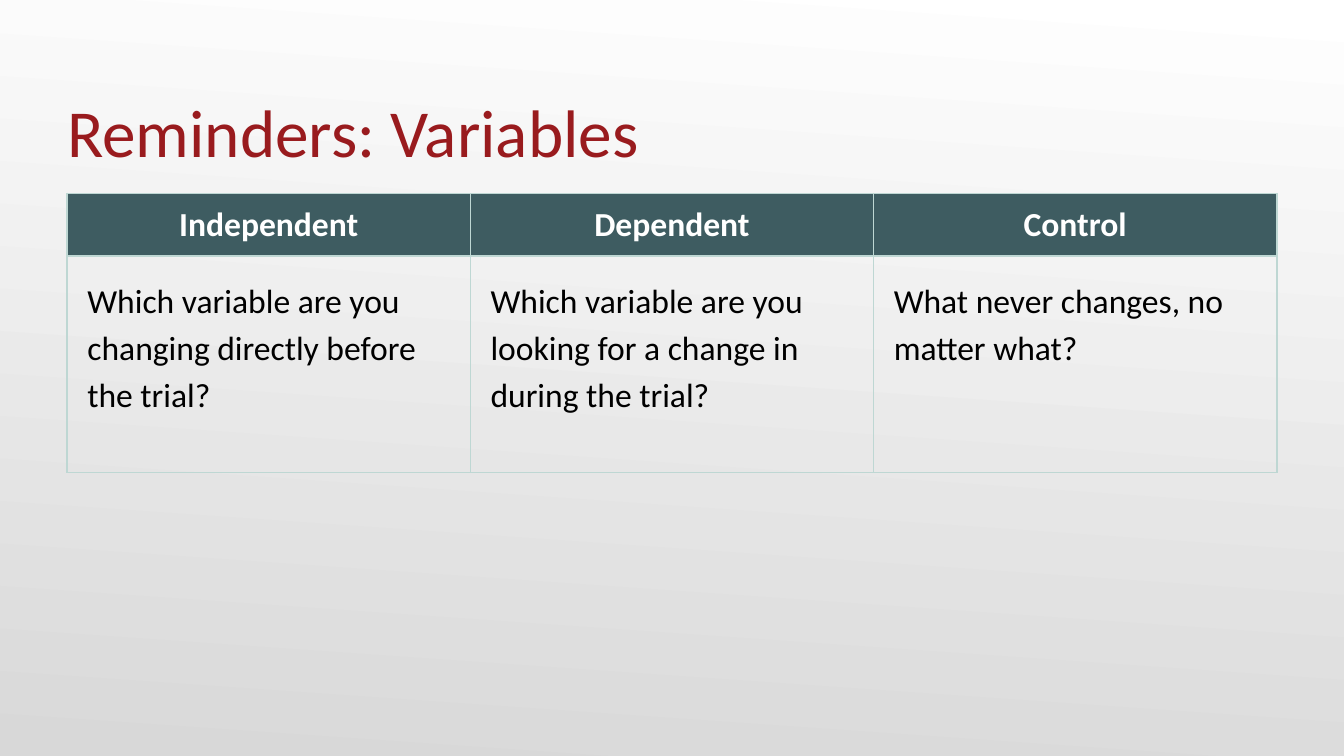
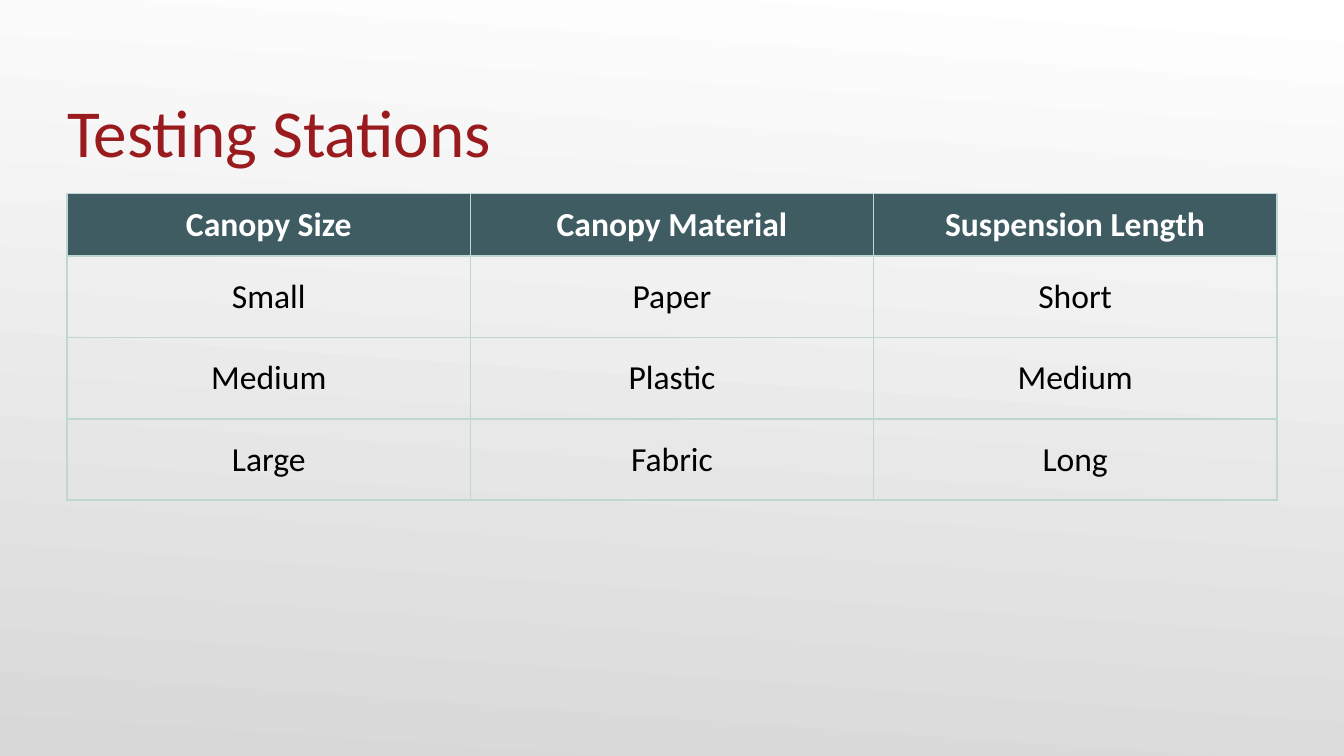
from lxml.etree import SubElement
from pptx import Presentation
from pptx.dml.color import RGBColor
from pptx.enum.text import MSO_ANCHOR as Anchor, PP_ALIGN as Align
from pptx.oxml.ns import qn
from pptx.util import Inches, Pt

WHITE = RGBColor(0xFF, 0xFF, 0xFF)
SILVER = RGBColor(0xD8, 0xD8, 0xD8)
CRIMSON = RGBColor(0x99, 0x1B, 0x1E)
TEAL = RGBColor(0x3E, 0x5C, 0x61)
MINT = RGBColor(0xBE, 0xD7, 0xD3)
BLACK = RGBColor(0, 0, 0)

SLIDE_WIDTH = 10
SLIDE_HEIGHT = SLIDE_WIDTH * 9 / 16
TITLE_BOX = (0.5, 0.33, 9, 0.94)
TABLE_BOX = (0.5, 1.44, 9)
HEADER_HEIGHT = 0.46
TITLE_FONT = {"name": "Calibri", "size": Pt(36), "bold": False}
HEADER_FONT = {"name": "Calibri", "size": Pt(18), "bold": True}
BODY_FONT = {**HEADER_FONT, "bold": False}
HEADER = {"margin": 0.08, "anchor": Anchor.TOP, "align": Align.CENTER,
          "spacing": 1.0, "font": HEADER_FONT, "color": WHITE, "fill": TEAL}
QUESTION = {"margin": 0.15, "anchor": Anchor.TOP, "align": Align.LEFT,
            "spacing": 1.14, "font": BODY_FONT, "color": BLACK, "fill": None}
OPTION = {**QUESTION, "anchor": Anchor.MIDDLE, "align": Align.CENTER, "spacing": 1.0}

SLIDES = [
    ("Reminders: Variables", QUESTION, 1.61, [
        ("Independent", "Dependent", "Control"),
        ("Which variable are you changing directly before the trial?",
         "Which variable are you looking for a change in during the trial?",
         "What never changes, no matter what?"),
    ]),
    ("Testing Stations", OPTION, 0.6, [
        ("Canopy Size", "Canopy Material", "Suspension Length"),
        ("Small", "Paper", "Short"),
        ("Medium", "Plastic", "Medium"),
        ("Large", "Fabric", "Long"),
    ]),
]


def set_font(font, values, color):
    """Apply a dict of font values and a colour."""
    for key, value in values.items():
        setattr(font, key, value)
    font.color.rgb = color


def paint_background(master):
    """Give every slide the white to silver gradient."""
    fill = master.background.fill
    fill.gradient()
    fill.gradient_angle = 266
    for stop, position, color in zip(fill.gradient_stops, (0, 1), (WHITE, SILVER)):
        stop.position = position
        stop.color.rgb = color


def add_title(slide, text, box):
    """Place the slide title at the bottom of its box."""
    title = slide.shapes.title
    title.left, title.top, title.width, title.height = map(Inches, box)
    frame = title.text_frame
    frame.text = text
    frame.vertical_anchor = Anchor.BOTTOM
    frame.margin_left = frame.margin_right = frame.margin_bottom = 0
    frame.margin_top = Inches(0.05)
    heading = frame.paragraphs[0]
    heading.alignment = Align.LEFT
    set_font(heading.runs[0].font, TITLE_FONT, CRIMSON)


def add_borders(cell):
    """Draw a thin mint line on all four sides of a cell."""
    properties = cell._tc.get_or_add_tcPr()
    for side in ("a:lnL", "a:lnR", "a:lnT", "a:lnB"):
        line = SubElement(properties, qn(side), w=str(Pt(1)))
        solid = SubElement(line, qn("a:solidFill"))
        SubElement(solid, qn("a:srgbClr"), val=str(MINT))


def fill_cell(cell, text, style):
    """Write one cell in the given style."""
    cell.text = text
    add_borders(cell)
    if style["fill"] is None:
        cell.fill.background()
    else:
        cell.fill.solid()
        cell.fill.fore_color.rgb = style["fill"]
    for side in ("left", "right", "top", "bottom"):
        setattr(cell, f"margin_{side}", Inches(style["margin"]))
    cell.vertical_anchor = style["anchor"]
    paragraph = cell.text_frame.paragraphs[0]
    paragraph.alignment = style["align"]
    paragraph.line_spacing = style["spacing"]
    set_font(paragraph.runs[0].font, style["font"], style["color"])


def add_grid(slide, rows, body_style, body_height, box):
    """Build the table with a header row and equal columns."""
    left, top, width = box
    columns = len(rows[0])
    heights = [HEADER_HEIGHT] + [body_height] * (len(rows) - 1)
    grid = slide.shapes.add_table(
        len(rows), columns, Inches(left), Inches(top),
        Inches(width), Inches(sum(heights))).table
    grid.first_row = grid.horz_banding = False
    for column in grid.columns:
        column.width = Inches(width / columns)
    for r, (texts, height) in enumerate(zip(rows, heights)):
        grid.rows[r].height = Inches(height)
        for c, text in enumerate(texts):
            fill_cell(grid.cell(r, c), text, body_style if r else HEADER)


def main():
    """Build and save the two table slides."""
    deck = Presentation()
    deck.slide_width, deck.slide_height = Inches(SLIDE_WIDTH), Inches(SLIDE_HEIGHT)
    paint_background(deck.slide_master)
    for title, body_style, body_height, rows in SLIDES:
        slide = deck.slides.add_slide(deck.slide_layouts.get_by_name("Title Only"))
        add_title(slide, title, TITLE_BOX)
        add_grid(slide, rows, body_style, body_height, TABLE_BOX)
    deck.save("out.pptx")


if __name__ == "__main__":
    main()
